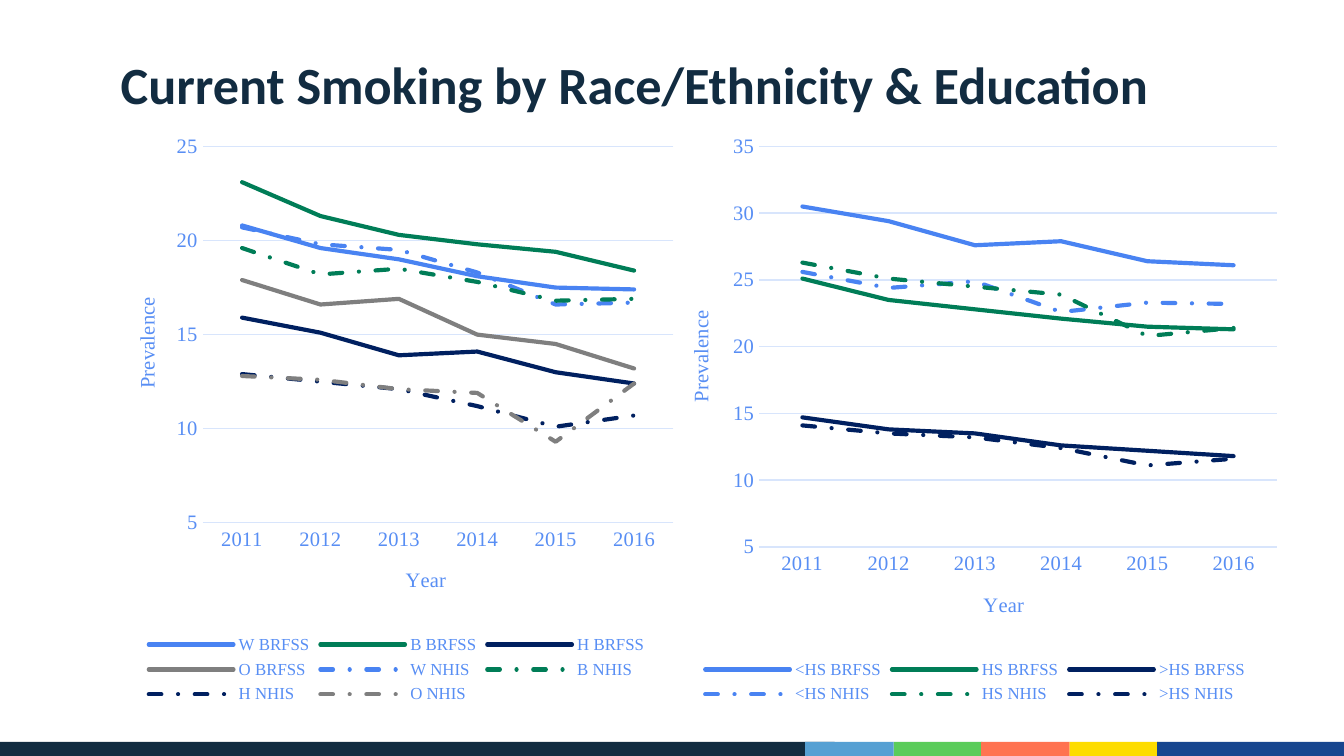
from lxml import etree
from pptx import Presentation
from pptx.chart.data import CategoryChartData
from pptx.dml.color import RGBColor
from pptx.enum.chart import XL_CHART_TYPE, XL_LEGEND_POSITION, XL_TICK_MARK
from pptx.enum.dml import MSO_LINE
from pptx.enum.shapes import MSO_SHAPE
from pptx.oxml.ns import qn
from pptx.util import Inches, Pt

LINE = XL_CHART_TYPE.LINE
BOTTOM = XL_LEGEND_POSITION.BOTTOM
NONE = XL_TICK_MARK.NONE
DASH = MSO_LINE.DASH_DOT
RECT = MSO_SHAPE.RECTANGLE

NAVY = RGBColor(0x12, 0x2C, 0x41)
SKY = RGBColor(0x56, 0xA0, 0xD3)
LIME = RGBColor(0x5A, 0xCC, 0x5A)
CORAL = RGBColor(0xFF, 0x73, 0x51)
YELLOW = RGBColor(0xFD, 0xDC, 0x00)
ROYAL = RGBColor(0x17, 0x46, 0x8F)
BLUE = RGBColor(0x49, 0x83, 0xF2)
GREEN = RGBColor(0x00, 0x7D, 0x57)
DARK = RGBColor(0x00, 0x20, 0x60)
GRAY = RGBColor(0x7F, 0x7F, 0x7F)
LABEL = RGBColor(0x58, 0x8E, 0xF4)
GRID = RGBColor(0xD8, 0xE5, 0xFC)

TALL = 4.35
YEARS = ["2011", "2012", "2013", "2014", "2015", "2016"]
RACE = [
    ("W BRFSS", BLUE, [20.8, 19.6, 19, 18.1, 17.5, 17.4]),
    ("B BRFSS", GREEN, [23.1, 21.3, 20.3, 19.8, 19.4, 18.4]),
    ("H BRFSS", DARK, [15.9, 15.1, 13.9, 14.1, 13, 12.4]),
    ("O BRFSS", GRAY, [17.9, 16.6, 16.9, 15, 14.5, 13.2]),
    ("W NHIS", BLUE, [20.7, 19.8, 19.5, 18.3, 16.6, 16.7]),
    ("B NHIS", GREEN, [19.6, 18.2, 18.5, 17.8, 16.8, 16.9]),
    ("H NHIS", DARK, [12.9, 12.5, 12.1, 11.2, 10.1, 10.7]),
    ("O NHIS", GRAY, [12.8, 12.6, 12.1, 11.9, 9.3, 12.4]),
]
SCHOOL = [
    ("<HS BRFSS", BLUE, [30.5, 29.4, 27.6, 27.9, 26.4, 26.1]),
    ("HS BRFSS", GREEN, [25.1, 23.5, 22.8, 22.1, 21.5, 21.3]),
    (">HS BRFSS", DARK, [14.7, 13.8, 13.5, 12.6, 12.2, 11.8]),
    ("<HS NHIS", BLUE, [25.6, 24.4, 24.9, 22.6, 23.3, 23.2]),
    ("HS NHIS", GREEN, [26.3, 25.1, 24.5, 23.9, 20.8, 21.4]),
    (">HS NHIS", DARK, [14.1, 13.5, 13.2, 12.4, 11.1, 11.6]),
]


def style(font, face="Times New Roman", size=11, color=LABEL, bold=False):
    font.name = face
    font.size = Pt(size)
    font.color.rgb = color
    font.bold = bold


def write(frame, text, **form):
    run = frame.paragraphs[0].add_run()
    run.text = text
    style(run.font, **form)


def place(parent, index, width, spot):
    for old in parent.findall(qn("c:layout")):
        parent.remove(old)
    layout = etree.Element(qn("c:layout"))
    manual = etree.SubElement(layout, qn("c:manualLayout"))
    if len(spot) == 4:
        etree.SubElement(manual, qn("c:layoutTarget")).set("val", "inner")
    for key in "xy":
        etree.SubElement(manual, qn(f"c:{key}Mode")).set("val", "edge")
    for key, value, whole in zip("xywh", spot, (width, TALL, width, TALL)):
        etree.SubElement(manual, qn(f"c:{key}")).set("val", f"{value / whole:.4f}")
    parent.insert(index, layout)


class Deck:
    def __init__(self):
        self.file = Presentation()
        self.file.slide_width = Inches(10)
        self.file.slide_height = Inches(10) * 9 // 16
        self.slide = self.file.slides.add_slide(self.file.slide_layouts[6])

    def bar(self, left, width, color):
        shape = self.slide.shapes.add_shape(
            RECT, Inches(left), Inches(5.52), Inches(width), Inches(0.11))
        shape.shadow.inherit = False
        shape.fill.solid()
        shape.fill.fore_color.rgb = color
        shape.line.fill.background()

    def title(self, text):
        box = self.slide.shapes.add_textbox(
            Inches(0.8), Inches(0.34), Inches(8.57), Inches(0.57))
        box.text_frame.word_wrap = True
        write(box.text_frame, text, face="Calibri", size=28, color=NAVY, bold=True)

    def axis(self, axis, text, width, spot):
        axis.major_tick_mark = axis.minor_tick_mark = NONE
        style(axis.tick_labels.font)
        write(axis.axis_title.text_frame, text)
        place(axis.axis_title._element, 1, width, spot)

    def chart(self, left, width, top, rows, plot, year, rate):
        data = CategoryChartData()
        data.categories = YEARS
        for name, color, values in rows:
            data.add_series(name, values)
        chart = self.slide.shapes.add_chart(
            LINE, Inches(left), Inches(0.93), Inches(width), Inches(TALL), data).chart
        style(chart.font)
        chart.has_title = False
        chart.has_legend = True
        chart.legend.position = BOTTOM
        chart.legend.include_in_layout = False
        style(chart.legend.font, size=9)

        cat, val = chart.category_axis, chart.value_axis
        self.axis(cat, "Year", width, year)
        self.axis(val, "Prevalence", width, rate)
        cat.format.line.color.rgb = GRID
        cat.format.line.width = Pt(0.75)
        val.format.line.fill.background()
        val.minimum_scale, val.maximum_scale, val.major_unit = 5, top, 5
        grid = val.major_gridlines.format.line
        grid.color.rgb = GRID
        grid.width = Pt(0.75)

        for series, (name, color, values) in zip(chart.plots[0].series, rows):
            series.smooth = False
            line = series.format.line
            line.color.rgb = color
            line.width = Pt(2.25)
            if name.endswith("NHIS"):
                line.dash_style = DASH
            series._element.find(".//" + qn("a:ln")).set("cap", "rnd")
        chart.plots[0].vary_by_categories = False
        area = chart._chartSpace.find(".//" + qn("c:plotArea"))
        place(area, 0, width, plot)


def main():
    deck = Deck()
    for left, color in [(6.65, LIME), (7.3, CORAL), (7.96, YELLOW)]:
        deck.bar(left, 0.66, color)
    deck.bar(8.61, 1.39, ROYAL)
    deck.bar(0, 6.21, NAVY)
    deck.bar(5.99, 0.66, SKY)
    deck.title("Current Smoking by Race/Ethnicity & Education")
    deck.chart(0.8, 4.3, 25, RACE, plot=(0.71, 0.16, 3.5, 2.8),
               year=(2.19, 3.26), rate=(0.17, 1.25))
    deck.chart(4.92, 4.67, 35, SCHOOL, plot=(0.73, 0.16, 3.85, 2.98),
               year=(2.37, 3.45), rate=(0.17, 1.35))
    deck.file.save("out.pptx")


if __name__ == "__main__":
    main()
